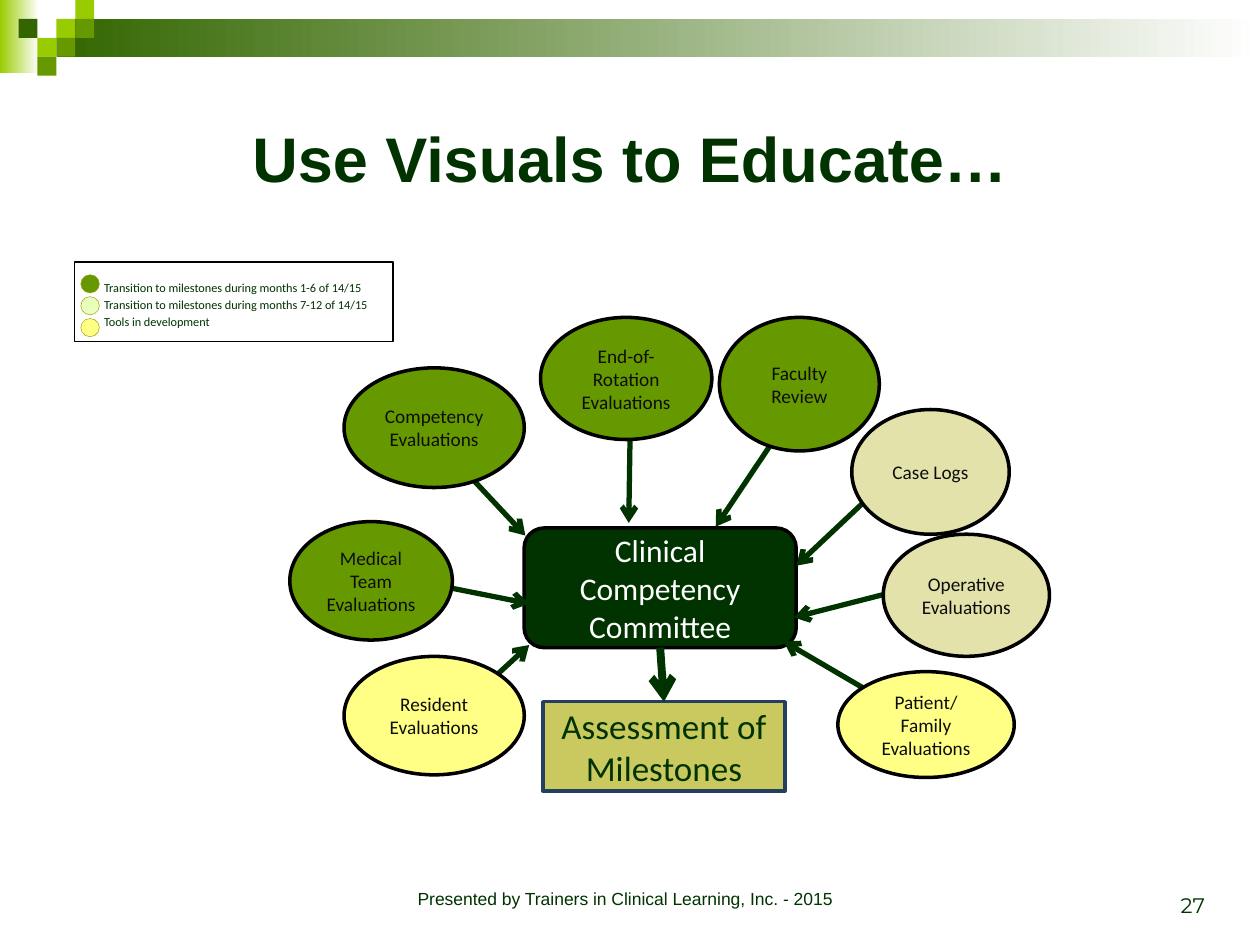
"""Build a slide showing the evaluation sources that feed a clinical competency committee."""
from lxml.etree import SubElement
from pptx import Presentation
from pptx.dml.color import RGBColor
from pptx.enum.shapes import MSO_CONNECTOR as CONNECTOR, MSO_SHAPE as SHAPE
from pptx.enum.text import MSO_ANCHOR as ANCHOR, PP_ALIGN as ALIGN
from pptx.oxml.ns import qn
from pptx.util import Pt

DARK = RGBColor(0x00, 0x33, 0x00)
FOREST = RGBColor(0x33, 0x66, 0x00)
GREEN = RGBColor(0x66, 0x99, 0x00)
LIME = RGBColor(0x99, 0xCC, 0x00)
MINT = RGBColor(0xE7, 0xFF, 0xB8)
YELLOW = RGBColor(0xFF, 0xFF, 0x85)
BEIGE = RGBColor(0xE2, 0xE2, 0xAA)
KHAKI = RGBColor(0xC9, 0xC9, 0x60)
OLIVE = RGBColor(0x97, 0x97, 0x00)
NAVY = RGBColor(0x24, 0x3F, 0x60)
INK = RGBColor(0x0D, 0x0D, 0x0D)
BLACK = RGBColor(0x00, 0x00, 0x00)
WHITE = RGBColor(0xFF, 0xFF, 0xFF)

presentation = Presentation()
presentation.slide_width, presentation.slide_height = Pt(720), Pt(540)
slide = presentation.slides.add_slide(presentation.slide_layouts[6])


def add_box(kind, box, fill, line=None, width=2):
    shape = slide.shapes.add_shape(kind, *map(Pt, box))
    shape.shadow.inherit = False
    shape.fill.solid()
    shape.fill.fore_color.rgb = fill
    if line is None:
        shape.line.fill.background()
    else:
        shape.line.color.rgb = line
        shape.line.width = Pt(width)
    return shape


def write(shape, text, size, color, name="Calibri", align=ALIGN.CENTER, anchor=ANCHOR.MIDDLE):
    frame = shape.text_frame
    frame.word_wrap = True
    frame.vertical_anchor = anchor
    frame.text = text
    for paragraph in frame.paragraphs:
        paragraph.alignment = align
        paragraph.font.size = Pt(size)
        paragraph.font.name = name
        paragraph.font.color.rgb = color
    return frame


for box, color in [((0, 0, 22.3, 41.8), LIME), ((32.4, 10.8, 687.6, 21.6), FOREST)]:
    band = add_box(SHAPE.RECTANGLE, box, color)
    band.fill.gradient()
    band.fill.gradient_angle = 0
    for stop, stop_color in zip(band.fill.gradient_stops, (color, WHITE)):
        stop.color.rgb = stop_color
    for stop, position in zip(band.fill.gradient_stops, (0, 1)):
        stop.position = position

TILE = 10.8
tiles = [(2, 1, LIME), (3, 0, LIME), (3, 1, GREEN), (1, 2, LIME),
         (0, 1, FOREST), (2, 2, GREEN), (1, 3, GREEN)]
for column, row, color in tiles:
    add_box(SHAPE.RECTANGLE, (10.6 + column * TILE, row * TILE, TILE, TILE), color)

title = slide.shapes.add_textbox(Pt(36), Pt(36), Pt(648), Pt(108))
write(title, "Use Visuals to Educate…", 36, DARK, "Arial").paragraphs[0].font.bold = True
number = slide.shapes.add_textbox(Pt(527.8), Pt(491.8), Pt(167.8), Pt(36))
write(number, "27", 12, DARK, "Montserrat", ALIGN.RIGHT, ANCHOR.BOTTOM)
footer = slide.shapes.add_textbox(Pt(198), Pt(504), Pt(318.2), Pt(23.8))
write(footer, "Presented by Trainers in Clinical Learning, Inc. - 2015", 10, DARK, "Arial",
      anchor=ANCHOR.TOP)

committee = add_box(SHAPE.ROUNDED_RECTANGLE, (299.5, 301.7, 155.5, 68.4), DARK, BLACK)
write(committee, "Clinical Competency Committee", 18, WHITE)
milestones = add_box(SHAPE.RECTANGLE, (310.3, 401, 138.2, 51.1), KHAKI, NAVY)
write(milestones, "Assessment of Milestones", 20, DARK)

arrows = [
    (360, 252, 359.3, 298.8),
    (267.8, 271.4, 300.2, 306),
    (258.5, 336.2, 302.4, 344.9),
    (492.5, 288, 455, 323.3),
    (448.6, 241.9, 409, 301),
    (493.2, 393.1, 447.8, 366.5),
    (284.4, 385.2, 302.4, 368.6),
    (504.7, 339.8, 453.6, 352.8),
    (377.3, 373, 376.6, 401),
]
for ends in arrows:
    arrow = slide.shapes.add_connector(CONNECTOR.STRAIGHT, *map(Pt, ends))
    arrow.line.color.rgb = DARK
    arrow.line.width = Pt(3)
    SubElement(arrow.line._get_or_add_ln(), qn("a:tailEnd"), type="arrow")
    SubElement(arrow._element.spPr, qn("a:effectLst"))
arrow.line.width = Pt(4.5)
arrow.begin_connect(committee, 2)
arrow.end_connect(milestones, 0)

sources = [
    ("End-of-Rotation Evaluations", (308.9, 181.4, 97.9, 69.8), GREEN),
    ("Resident Evaluations", (196.6, 375.1, 103, 67.7), YELLOW),
    ("Case Logs", (486.7, 234, 90, 71.3), BEIGE),
    ("Operative Evaluations", (504.7, 305.3, 95, 69.8), BEIGE),
    ("Patient/ Family Evaluations", (478.8, 383.8, 100.8, 60.5), YELLOW),
    ("Medical Team Evaluations", (165.6, 298.1, 92.9, 67.7), GREEN),
    ("Faculty Review", (411.1, 181.4, 91.4, 76.3), GREEN),
    ("Competency\nEvaluations", (196.6, 210.2, 103, 68.4), GREEN),
]
for text, box, color in sources:
    write(add_box(SHAPE.OVAL, box, color, BLACK), text, 11, INK)

legend = add_box(SHAPE.RECTANGLE, (42.5, 149.8, 182.2, 45.4), WHITE, BLACK, 0.75)
legend_entries = [
    ("Transition to milestones during months 1-6 of 14/15", GREEN),
    ("Transition to milestones during months 7-12 of 14/15", MINT),
    ("Tools in development", YELLOW),
]
frame = write(legend, "\n".join(text for text, color in legend_entries), 7, DARK,
              align=ALIGN.LEFT, anchor=ANCHOR.TOP)
frame.margin_left, frame.margin_top = Pt(17), Pt(9)
for paragraph in frame.paragraphs:
    paragraph.line_spacing = 1.15
for index, (text, color) in enumerate(legend_entries):
    add_box(SHAPE.OVAL, (46.2, 157 + index * 12.5, 10.6, 10.4), color, OLIVE, 0.25)

presentation.save("out.pptx")
